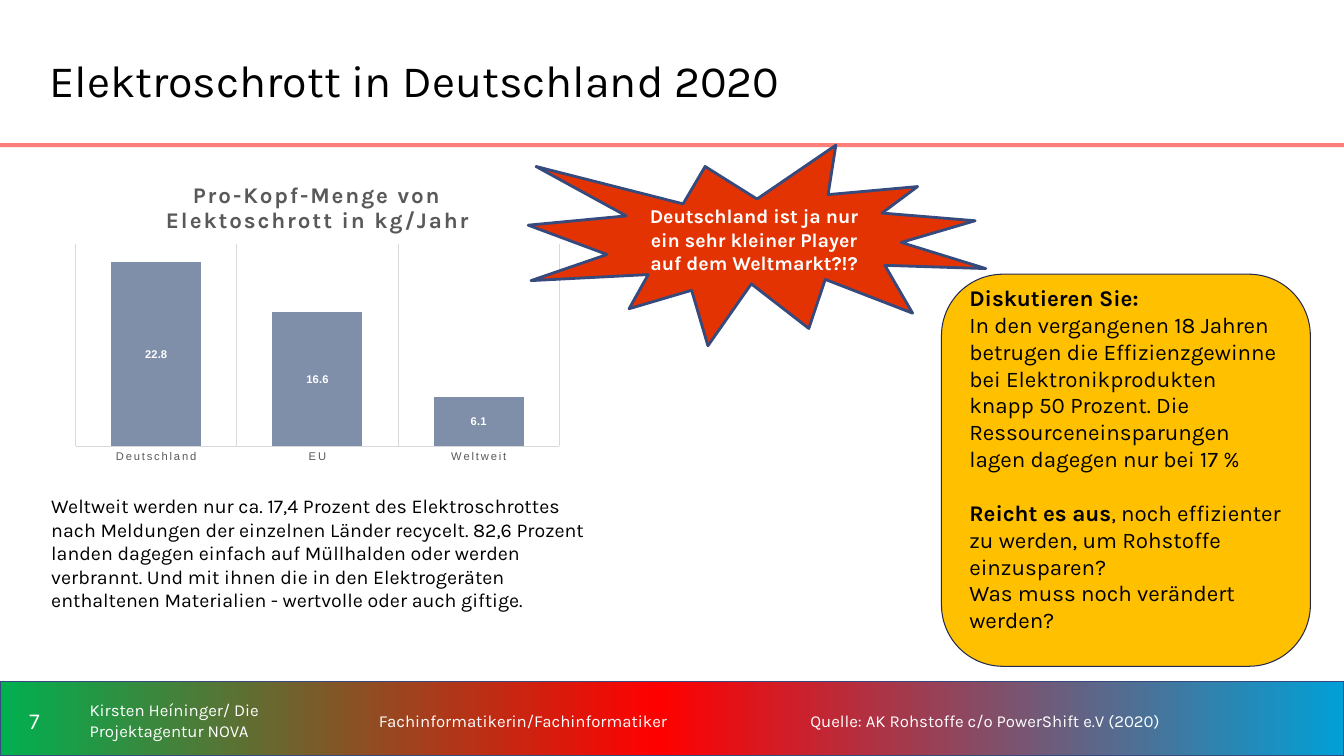
"""Builds the slide on electronic waste in Germany."""
from copy import deepcopy

from lxml import etree
from pptx import Presentation
from pptx import util as u
from pptx.chart import data
from pptx.dml import color
from pptx.enum import chart as charts
from pptx.enum import shapes, text

COLORS = {
    "black": "000000", "white": "FFFFFF", "gray": "595959", "grid": "D9D9D9",
    "rule": "FF7E79", "amber": "FFC000", "navy": "242852", "outline": "364A7D",
    "burst": "E33303", "bar": "7F8FA9",
    "green": "00B050", "red": "FF0000", "blue": "01A0D6",
}
COLUMNS, ROWS = 40, 22.5
MIDDLE = text.MSO_ANCHOR.MIDDLE
CENTER = text.PP_ALIGN.CENTER


def rgb(name):
    """Return the named colour."""
    return color.RGBColor.from_string(COLORS[name])


def apply(target, values):
    """Set attributes of an object from a dict."""
    for name, value in values.items():
        setattr(target, name, value)


class SlideBuilder:
    """Holds the style and the current slide."""

    def __init__(self, presentation, font="Karla"):
        """Add a title-only slide."""
        self.font = font
        self.column = presentation.slide_width / COLUMNS
        self.row = presentation.slide_height / ROWS
        self.slide = presentation.slides.add_slide(presentation.slide_layouts[5])

    def box(self, left, top, width, height):
        """Turn grid units into lengths."""
        return [int(left * self.column), int(top * self.row),
                int(width * self.column), int(height * self.row)]

    def style(self, font, size, fill, bold=False, name=None):
        """Format a font."""
        apply(font, {"size": u.Pt(size), "bold": bold, "name": name or self.font})
        font.color.rgb = rgb(fill)

    def set_text(self, shape, paragraphs, size, fill, bold=False, name=None,
                 align=text.PP_ALIGN.LEFT, anchor=MIDDLE, inset=0.05,
                 bottom=None, gaps=(), spacing=None):
        """Fill a shape with paragraphs of (text, bold) runs or plain strings."""
        frame = shape.text_frame
        apply(frame, {
            "word_wrap": True, "auto_size": text.MSO_AUTO_SIZE.NONE,
            "vertical_anchor": anchor,
            "margin_left": u.Inches(0.1), "margin_right": u.Inches(0.1),
            "margin_top": u.Inches(inset), "margin_bottom": u.Inches(bottom or inset),
        })
        for index, content in enumerate(paragraphs):
            paragraph = frame.add_paragraph() if index else frame.paragraphs[0]
            apply(paragraph, {"alignment": align, "line_spacing": spacing})
            if index in gaps:
                paragraph.space_before = u.Pt(size * 1.2)
            runs = [(content, bold)] if isinstance(content, str) else content
            for words, weight in runs:
                run = paragraph.add_run()
                run.text = words
                self.style(run.font, size, fill, weight, name)

    def title(self, place, words, size):
        """Move and format the title placeholder."""
        shape = self.slide.shapes.title
        apply(shape, dict(zip(("left", "top", "width", "height"), self.box(*place))))
        self.set_text(shape, [words], size, "black")

    def label(self, place, words, size, fill="white", **options):
        """Add a text box."""
        shape = self.slide.shapes.add_textbox(*self.box(*place))
        self.set_text(shape, [words], size, fill, **options)

    def shape(self, kind, place, fill=None, line=None, weight=1):
        """Add a preset shape without shadow."""
        shape = self.slide.shapes.add_shape(kind, *self.box(*place))
        shape.shadow.inherit = False
        if fill:
            shape.fill.solid()
            shape.fill.fore_color.rgb = rgb(fill)
        if line:
            shape.line.color.rgb = rgb(line)
            shape.line.width = u.Pt(weight)
        else:
            shape.line.fill.background()
        return shape

    def gradient_band(self, place, stops, line):
        """Add a rectangle with a horizontal gradient."""
        band = self.shape(shapes.MSO_SHAPE.RECTANGLE, place, line=line)
        band.fill.gradient()
        band.fill.gradient_angle = 0
        stop_list = band._element.spPr.find(".//{*}gsLst")
        for _ in range(len(stops) - len(stop_list)):
            stop_list.append(deepcopy(stop_list[0]))
        for stop, (position, name) in zip(band.fill.gradient_stops, stops):
            stop.position = position
            stop.color.rgb = rgb(name)

    def column_chart(self, place, heading, values):
        """Add a stacked column chart with value labels."""
        chart_data = data.CategoryChartData()
        chart_data.categories = list(values)
        chart_data.add_series("Series 1", list(values.values()))
        chart = self.slide.shapes.add_chart(
            charts.XL_CHART_TYPE.COLUMN_STACKED, *self.box(*place), chart_data).chart
        self.style(chart.font, 10, "black", name="Arial")
        apply(chart, {"has_legend": False, "has_title": True})
        chart.chart_title.include_in_layout = False
        frame = chart.chart_title.text_frame
        frame.text = heading
        heading_font = frame.paragraphs[0].runs[0].font
        self.style(heading_font, 16, "gray", bold=True)
        heading_font._rPr.set("spc", "150")

        plot = chart.plots[0]
        apply(plot, {"gap_width": 79, "overlap": 100, "vary_by_categories": False,
                     "has_data_labels": True})
        apply(plot.data_labels, {"show_value": True,
                                 "position": charts.XL_LABEL_POSITION.CENTER})
        self.style(plot.data_labels.font, 8, "white", bold=True, name="Arial")
        fill = plot.series[0].format.fill
        fill.solid()
        fill.fore_color.rgb = rgb("bar")

        apply(chart.value_axis, {"visible": False, "has_major_gridlines": False,
                                 "minimum_scale": 0, "maximum_scale": 25})
        axis = chart.category_axis
        apply(axis, {"has_major_gridlines": True,
                     "major_tick_mark": charts.XL_TICK_MARK.NONE})
        self.style(axis.tick_labels.font, 8, "gray", name="Arial")
        axis.tick_labels.font._rPr.set("spc", "120")
        for line in (axis.format.line, axis.major_gridlines.format.line):
            line.color.rgb = rgb("grid")
            line.width = u.Pt(0.75)
        self.plot_layout(chart, {"x": 0.02, "y": 0.26, "w": 0.96, "h": 0.67})

    def plot_layout(self, chart, shares):
        """Fix the inner plot area as shares of the chart."""
        area = chart._chartSpace.find(".//{*}plotArea")
        for old in area.findall("{*}layout"):
            area.remove(old)
        prefix = "{%s}" % etree.QName(area).namespace
        layout = etree.Element(prefix + "layout")
        manual = etree.SubElement(layout, prefix + "manualLayout")
        settings = {"layoutTarget": "inner", "xMode": "edge", "yMode": "edge", **shares}
        for name, value in settings.items():
            etree.SubElement(manual, prefix + name).set("val", str(value))
        area.insert(0, layout)


def main():
    """Build and save the slide."""
    presentation = Presentation()
    apply(presentation, {"slide_width": u.Inches(13.33), "slide_height": u.Inches(7.5)})
    page = SlideBuilder(presentation)
    kinds = shapes.MSO_SHAPE

    page.gradient_band((0, 20.28, COLUMNS, 2.22),
                       [(0, "green"), (0.49, "red"), (1, "blue")], "outline")
    page.shape(kinds.RECTANGLE, (0, 4.26, COLUMNS, 0.12), "rule")
    page.title((1.17, 0.6, 29.52, 3.54), "Elektroschrott in Deutschland 2020", 32)

    page.label((0, 20.52, 2.04, 1.83), "7", 16, name="Calibri", align=CENTER)
    for left, width, words, spacing in (
            (2.37, 8.34, "Kirsten Heíninger/ Die Projektagentur NOVA", None),
            (10.98, 12.57, "Fachinformatikerin/Fachinformatiker", 1.1),
            (23.82, 15.15, "Quelle: AK Rohstoffe c/o PowerShift e.V (2020)", 1.1)):
        page.label((left, 20.52, width, 1.83), words, 12, spacing=spacing)

    discussion = page.shape(kinds.ROUNDED_RECTANGLE, (28.02, 8.16, 10.98, 11.67),
                            "amber", "navy", 0.75)
    page.set_text(discussion, [
        [("Diskutieren Sie:", True)],
        "In den vergangenen 18 Jahren betrugen die Effizienzgewinne bei "
        "Elektronikprodukten knapp 50 Prozent. Die Ressourceneinsparungen "
        "lagen dagegen nur bei 17 %",
        [("Reicht es aus", True),
         (", noch effizienter zu werden, um Rohstoffe einzusparen?", False)],
        "Was muss noch verändert werden?",
    ], 16, "black", inset=0.1, bottom=0.33, gaps=(2,))

    page.label((1.23, 14.4, 16.56, 5.34),
               "Weltweit werden nur ca. 17,4 Prozent des Elektroschrottes nach "
               "Meldungen der einzelnen Länder recycelt. 82,6 Prozent landen dagegen "
               "einfach auf Müllhalden oder werden verbrannt. Und mit ihnen die in den "
               "Elektrogeräten enthaltenen Materialien - wertvolle oder auch giftige.",
               14, "black", anchor=text.MSO_ANCHOR.TOP, inset=0.1)
    page.column_chart((1.95, 4.92, 15, 9), "Pro-Kopf-Menge von Elektoschrott in kg/Jahr",
                      {"Deutschland": 22.8, "EU": 16.6, "Weltweit": 6.1})
    burst = page.shape(kinds.EXPLOSION1, (15.72, 4.32, 13.62, 5.97), "burst", "outline", 2)
    page.set_text(burst, ["Deutschland ist ja nur ein sehr kleiner Player auf dem Weltmarkt?!?"],
                  14, "white", bold=True, align=CENTER)
    presentation.save("out.pptx")


if __name__ == "__main__":
    main()
